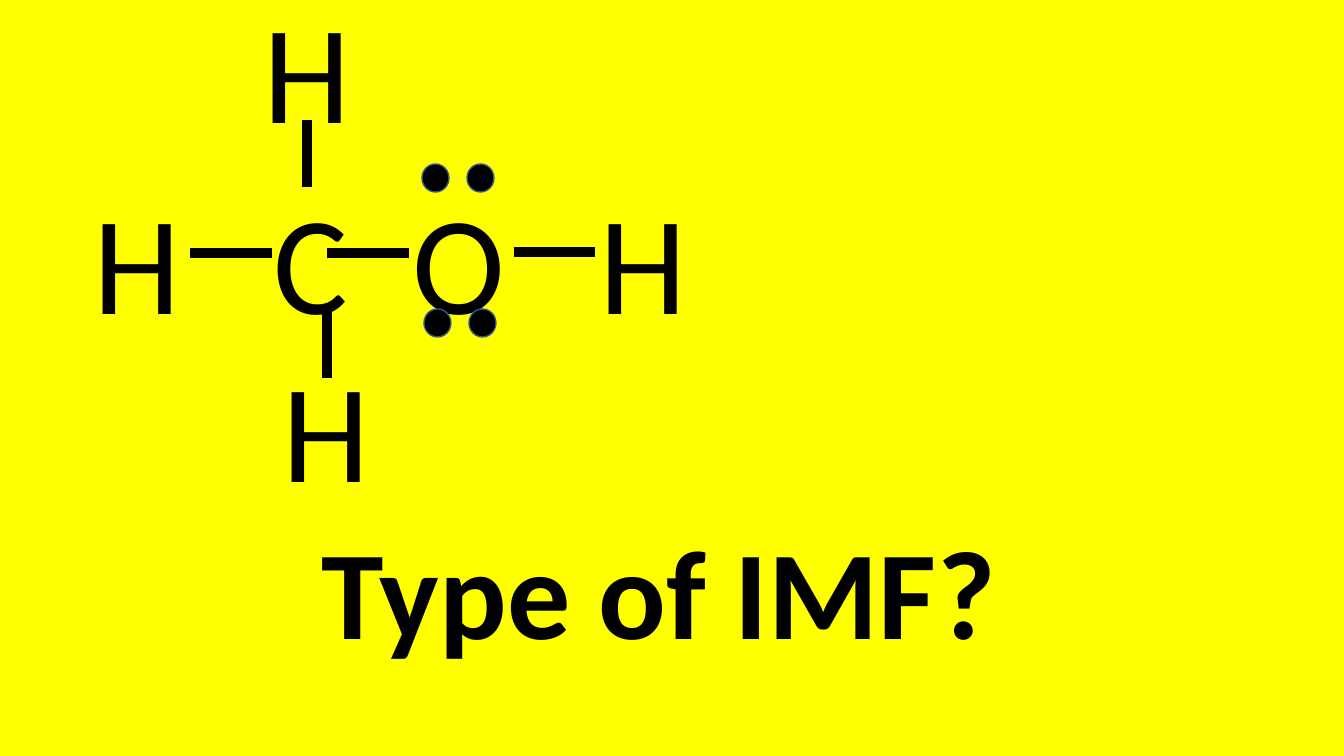
from typing import NamedTuple

from lxml.etree import SubElement
from pptx import Presentation
from pptx.dml.color import RGBColor
from pptx.enum.shapes import MSO_CONNECTOR, MSO_SHAPE
from pptx.enum.text import MSO_ANCHOR, MSO_AUTO_SIZE, PP_ALIGN
from pptx.oxml.ns import qn
from pptx.shapes.autoshape import Shape
from pptx.slide import Slide
from pptx.util import Emu, Pt

PIXELS_PER_INCH = 100.8
COLORS = {"background": "FFFF00", "ink": "000000", "dot_edge": "325491"}
FONT = "Calibri"
ATOM_WIDTH, ATOM_HEIGHT = 140, 171
CAPITAL_CENTER = 88  # from the top of an atom's line to the middle of its letter
DOT_WIDTH, DOT_HEIGHT, DOT_STEP = 27, 28, 45


class Atom(NamedTuple):
    symbol: str
    center_x: int
    center_y: int


class Bond(NamedTuple):
    start_x: int
    start_y: int
    end_x: int
    end_y: int


class LonePair(NamedTuple):
    left: int
    top: int


ATOMS = [
    Atom("H", 307, 71),
    Atom("H", 137, 262),
    Atom("C", 311, 262),
    Atom("O", 459, 262),
    Atom("H", 643, 262),
    Atom("H", 326, 430),
]
BONDS = [
    Bond(190, 253, 272, 253),
    Bond(327, 253, 409, 253),
    Bond(514, 252, 595, 252),
    Bond(327, 311, 327, 378),
    Bond(307, 120, 307, 187),
]
LONE_PAIRS = [LonePair(422, 164), LonePair(424, 309)]


def px(length: int) -> Emu:
    return Emu(round(length * 914400 / PIXELS_PER_INCH))


def color(name: str) -> RGBColor:
    return RGBColor.from_string(COLORS[name])


def write_text(shape: Shape, text: str, *, size: int, bold: bool = False,
               anchor: MSO_ANCHOR = MSO_ANCHOR.TOP,
               line_spacing: float = 1.0) -> None:
    frame = shape.text_frame
    frame.word_wrap = True
    frame.auto_size = MSO_AUTO_SIZE.NONE
    frame.vertical_anchor = anchor
    frame.margin_left = frame.margin_right = 0
    frame.margin_top = frame.margin_bottom = 0
    paragraph = frame.paragraphs[0]
    paragraph.alignment = PP_ALIGN.CENTER
    paragraph.line_spacing = line_spacing
    run = paragraph.add_run()
    run.text = text
    run.font.name = FONT
    run.font.size = Pt(size)
    run.font.bold = bold
    run.font.color.rgb = color("ink")


def add_title(slide: Slide) -> None:
    title = slide.shapes.title
    title.left, title.top = px(0), px(386)
    title.width, title.height = px(1318), px(281)
    write_text(title, "Type of IMF?", size=90, bold=True,
               anchor=MSO_ANCHOR.BOTTOM, line_spacing=0.9)


def add_atom(slide: Slide, atom: Atom) -> None:
    box = slide.shapes.add_textbox(
        px(atom.center_x - ATOM_WIDTH // 2), px(atom.center_y - CAPITAL_CENTER),
        px(ATOM_WIDTH), px(ATOM_HEIGHT))
    write_text(box, atom.symbol, size=100)


def add_bond(slide: Slide, bond: Bond) -> None:
    line = slide.shapes.add_connector(
        MSO_CONNECTOR.STRAIGHT, *(px(value) for value in bond))
    line.line.color.rgb = color("ink")
    line.line.width = Pt(6.75)
    SubElement(line.element.spPr, qn("a:effectLst"))


def add_lone_pair(slide: Slide, pair: LonePair) -> None:
    for index in range(2):
        dot = slide.shapes.add_shape(
            MSO_SHAPE.OVAL, px(pair.left + index * DOT_STEP), px(pair.top),
            px(DOT_WIDTH), px(DOT_HEIGHT))
        dot.shadow.inherit = False
        dot.fill.solid()
        dot.fill.fore_color.rgb = color("ink")
        dot.line.color.rgb = color("dot_edge")
        dot.line.width = Pt(1)


def main() -> None:
    presentation = Presentation()
    presentation.slide_width, presentation.slide_height = px(1344), px(756)
    slide = presentation.slides.add_slide(presentation.slide_layouts.get_by_name("Title Only"))
    slide.background.fill.solid()
    slide.background.fill.fore_color.rgb = color("background")
    add_title(slide)
    for atom in ATOMS:
        add_atom(slide, atom)
    for bond in BONDS:
        add_bond(slide, bond)
    for pair in LONE_PAIRS:
        add_lone_pair(slide, pair)
    presentation.save("out.pptx")


if __name__ == "__main__":
    main()
